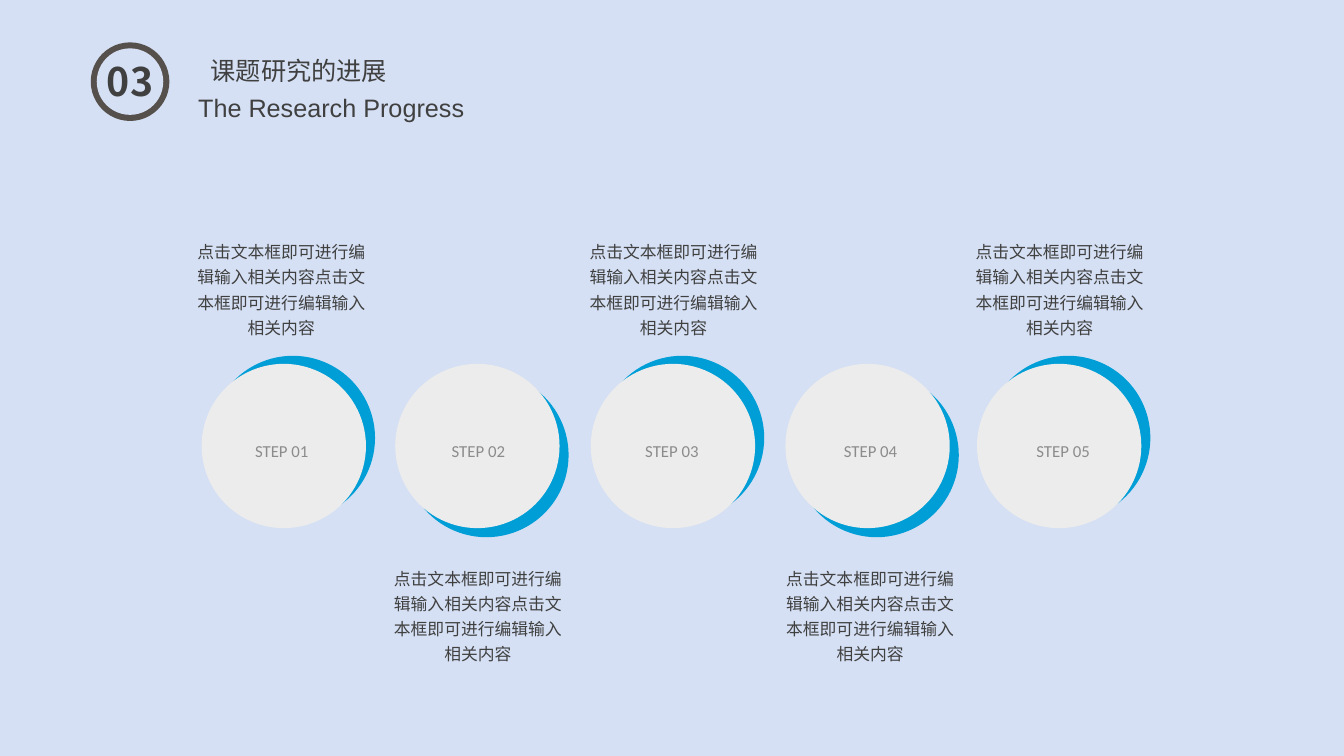
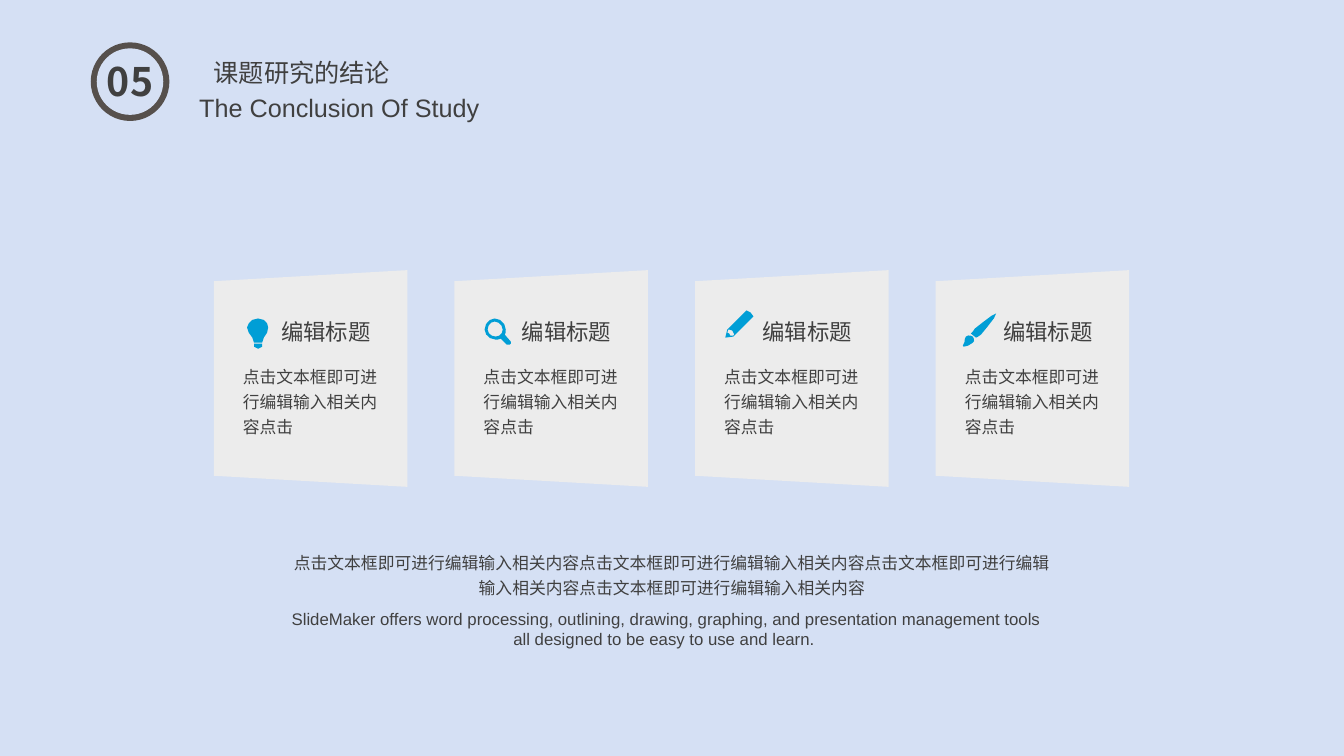
import pptx
import pptx.dml.color
import pptx.enum.shapes
import pptx.enum.text
import pptx.oxml.ns
import pptx.util
import lxml.etree

Inches = pptx.util.Inches
Pt = pptx.util.Pt
ALIGN = pptx.enum.text.PP_ALIGN
ANCHOR = pptx.enum.text.MSO_ANCHOR
PRESET = pptx.enum.shapes.MSO_SHAPE

COLORS = {"sky": "D5E0F4", "ring": "56504C", "ink": "404040",
          "blue": "009ED6", "pale": "ECECEC", "label": "8C8C8C"}
CJK = "Noto Sans CJK SC"

STYLES = {
    "number": {"font": {"size": Pt(28), "name": CJK, "bold": True},
               "paragraph": {"alignment": ALIGN.CENTER}},
    "title": {"font": {"size": Pt(18), "name": CJK},
              "paragraph": {"alignment": ALIGN.LEFT, "line_spacing": 2.0},
              "frame": {"word_wrap": False}},
    "subtitle": {"font": {"size": Pt(18), "name": "Arial"},
                 "paragraph": {"alignment": ALIGN.CENTER}},
    "step": {"font": {"size": Pt(12), "name": "Calibri"}, "color": "label",
             "paragraph": {"alignment": ALIGN.CENTER},
             "frame": {"vertical_anchor": ANCHOR.MIDDLE}},
    "caption": {"font": {"size": Pt(12), "name": CJK},
                "paragraph": {"alignment": ALIGN.CENTER, "line_spacing": 1.25}},
    "card body": {"font": {"size": Pt(12), "name": CJK},
                  "paragraph": {"line_spacing": 1.25}},
    "card title": {"font": {"size": Pt(16), "name": CJK}},
    "english": {"font": {"size": Pt(12), "name": "Arial"},
                "paragraph": {"alignment": ALIGN.CENTER},
                "frame": {"margin_left": 0, "margin_right": 0,
                          "margin_top": 0, "margin_bottom": 0}},
}

PHRASE = "点击文本框即可进行编辑输入相关内容"

STEPS = [(2.0, 1.93, 1.83), (3.92, 3.88, 3.78), (5.86, 5.8, 5.72),
         (7.79, 7.77, 7.67), (9.69, 9.68, 9.55)]

CARD_OUTLINE = [[(0, 11), (192, 0), (192, 215), (0, 204)]]

ICONS = {
    "bulb": [
        [[(40, 76), (41, 77, 42, 78, 44, 78), (46, 78, 47, 77, 48, 76),
          (48, 73), (40, 73)]],
        [[(48, 72), (48, 66, 55, 63, 54, 57), (54, 53, 51, 48, 44, 48),
          (37, 48, 34, 53, 33, 57), (33, 63, 40, 66, 40, 72)]],
    ],
    "magnifier": [[
        [(33, 59), (33, 55, 36, 51, 40, 51), (44, 51, 48, 55, 48, 59),
         (48, 63, 45, 66, 41, 66), (37, 66, 33, 63, 33, 59)],
        [(56, 71), (50, 64), (51, 63, 51, 61, 51, 59),
         (51, 53, 46, 48, 40, 48), (35, 48, 30, 53, 30, 59),
         (30, 64, 35, 69, 41, 69), (43, 69, 44, 69, 46, 68), (52, 74),
         (53, 75, 54, 75, 55, 74), (56, 73), (57, 72, 57, 71, 56, 71)],
    ]],
    "pencil": [[
        [(38, 65), (35, 65), (35, 65, 34, 64, 34, 63), (32, 62), (33, 59),
         (34, 59), (34, 59, 35, 59, 37, 60), (39, 62, 39, 64, 39, 64)],
        [(55, 42), (53, 39, 51, 40, 51, 40), (32, 59), (30, 67), (38, 66),
         (58, 46), (58, 46, 58, 44, 55, 42)],
    ]],
    "brush": [[
        [(60, 43), (59, 42, 44, 54, 39, 58), (37, 61, 36, 62, 35, 63),
         (40, 67), (41, 67, 42, 66, 45, 64), (49, 59, 62, 44, 60, 43)],
        [(30, 66), (28, 68, 30, 71, 27, 75), (25, 77, 33, 76, 37, 72),
         (39, 71, 38, 68, 37, 66), (35, 65, 32, 64, 30, 66)],
    ]],
}


def rgb(color):
    """Return the named colour."""
    return pptx.dml.color.RGBColor.from_string(COLORS[color])


def set_values(target, values):
    """Set each attribute named in values on the target."""
    for attribute, value in values.items():
        setattr(target, attribute, value)


def write(frame, text, style_name):
    """Write one styled paragraph into a text frame."""
    style = STYLES[style_name]
    set_values(frame, {"word_wrap": True, "vertical_anchor": ANCHOR.TOP,
                       "auto_size": pptx.enum.text.MSO_AUTO_SIZE.NONE,
                       **style.get("frame", {})})
    paragraph = frame.paragraphs[0]
    set_values(paragraph, style.get("paragraph", {}))
    run = paragraph.add_run()
    run.text = text
    set_values(run.font, style["font"])
    run.font.color.rgb = rgb(style.get("color", "ink"))
    east_asian = lxml.etree.SubElement(run.font._element, pptx.oxml.ns.qn("a:ea"))
    east_asian.set("typeface", style["font"]["name"])


def add_text(slide, box, text, style_name):
    """Add a text box at left, top, width, height."""
    write(slide.shapes.add_textbox(*map(Inches, box)).text_frame, text, style_name)


def paint(shape, color=None):
    """Give a shape a plain fill, or none, without line or shadow."""
    shape.shadow.inherit = False
    shape.line.fill.background()
    if color is None:
        shape.fill.background()
    else:
        shape.fill.solid()
        shape.fill.fore_color.rgb = rgb(color)


def add_disc(slide, left, top, size, color):
    """Add a plain circle."""
    box = map(Inches, (left, top, size, size))
    paint(slide.shapes.add_shape(PRESET.OVAL, *box), color)


def trace(contour):
    """Turn lines and cubic curves in hundredths of an inch into points."""
    points = [contour[0]]
    for segment in contour[1:]:
        start, end = points[-1], segment[-2:]
        span = max(abs(end[0] - start[0]), abs(end[1] - start[1]))
        pieces = 3 if len(segment) == 6 and span > 4 else 1
        for piece in range(1, pieces):
            t = piece / pieces
            weights = ((1 - t) ** 3, 3 * t * (1 - t) ** 2, 3 * t * t * (1 - t), t ** 3)
            controls = (start, segment[:2], segment[2:4], end)
            points.append(tuple(sum(weight * control[axis]
                                    for weight, control in zip(weights, controls))
                                for axis in (0, 1)))
        points.append(end)
    return [(Inches(x / 100), Inches(y / 100)) for x, y in points]


def add_outline(slide, left, top, contours, color):
    """Add a filled outline made of one or more closed contours."""
    traced = [trace(contour) for contour in contours]
    builder = slide.shapes.build_freeform(*traced[0][0], scale=1.0)
    for index, points in enumerate(traced):
        if index:
            builder.move_to(*points[0])
        builder.add_line_segments(points[1:], close=True)
    paint(builder.convert_to_shape(Inches(left), Inches(top)), color)


def add_header(slide, number, title, title_box, subtitle, subtitle_left):
    """Add the numbered ring and the title in two languages."""
    add_disc(slide, 0.9, 0.42, 0.78, "ring")
    add_disc(slide, 0.96, 0.48, 0.66, "sky")
    add_text(slide, (0.93, 0.52, 0.72, 0.57), number, "number")
    heading = slide.shapes.title
    set_values(heading, dict(zip(("left", "top", "width", "height"),
                                 map(Inches, title_box))))
    write(heading.text_frame, title, "title")
    subtitle_box = map(Inches, (subtitle_left, 0.87, 5.49, 0.4))
    subheading = slide.shapes.add_shape(PRESET.SNIP_1_RECTANGLE, *subtitle_box)
    subheading.adjustments[0] = 0
    paint(subheading)
    write(subheading.text_frame, subtitle, "subtitle")


def add_step(slide, top, lefts, number):
    """Add one step, with its crescent and caption above or below in turn."""
    disc_left, label_left, caption_left = lefts
    above = number % 2 == 1
    crescent_top = top - 0.08 if above else top + 0.09
    caption_top = top - 1.31 if above else top + 1.93
    add_disc(slide, disc_left + 0.09, crescent_top, 1.63, "blue")
    add_disc(slide, disc_left, top, 1.63, "pale")
    add_text(slide, (label_left, top + 0.66, 1.73, 0.41), f"STEP {number:02}", "step")
    add_text(slide, (caption_left, caption_top, 1.92, 1.11), PHRASE * 2, "caption")


def add_card(slide, left, top, icon):
    """Add one slanted card with icon, title and text."""
    add_outline(slide, left, top, CARD_OUTLINE, "pale")
    for contours in ICONS[icon]:
        add_outline(slide, left, top, contours, "blue")
    add_text(slide, (left + 0.19, top + 0.86, 1.61, 0.86), PHRASE + "点击", "card body")
    add_text(slide, (left + 0.57, top + 0.43, 1.22, 0.37), "编辑标题", "card title")


def build_progress(slide):
    """Build the slide of five steps."""
    add_header(slide, "03", "课题研究的进展", (1.99, 0.2, 1.97, 0.71),
               "The Research Progress", 0.54)
    for number, lefts in enumerate(STEPS, 1):
        add_step(slide, 3.61, lefts, number)


def build_conclusion(slide):
    """Build the slide of four cards and a closing text."""
    add_header(slide, "05", "课题研究的结论", (2.02, 0.22, 2.03, 0.71),
               "The Conclusion Of Study", 0.62)
    first_left, last_left = 2.12, 9.28
    pitch = (last_left - first_left) / (len(ICONS) - 1)
    for index, icon in enumerate(ICONS):
        add_card(slide, first_left + index * pitch, 2.68, icon)
    add_text(slide, (2.75, 5.38, 7.83, 0.61), PHRASE * 4, "caption")
    add_text(slide, (2.85, 6.04, 7.52, 0.4),
             "SlideMaker offers word processing, outlining, drawing, graphing, and "
             "presentation management tools all designed to be easy to use and learn. ",
             "english")


def main():
    """Build and save the presentation."""
    deck = pptx.Presentation()
    set_values(deck, {"slide_width": Inches(13.33), "slide_height": Inches(7.5)})
    backdrop = deck.slide_master.background.fill
    backdrop.solid()
    backdrop.fore_color.rgb = rgb("sky")
    title_only = deck.slide_layouts[5]
    for build in (build_progress, build_conclusion):
        build(deck.slides.add_slide(title_only))
    deck.save("out.pptx")


if __name__ == "__main__":
    main()
